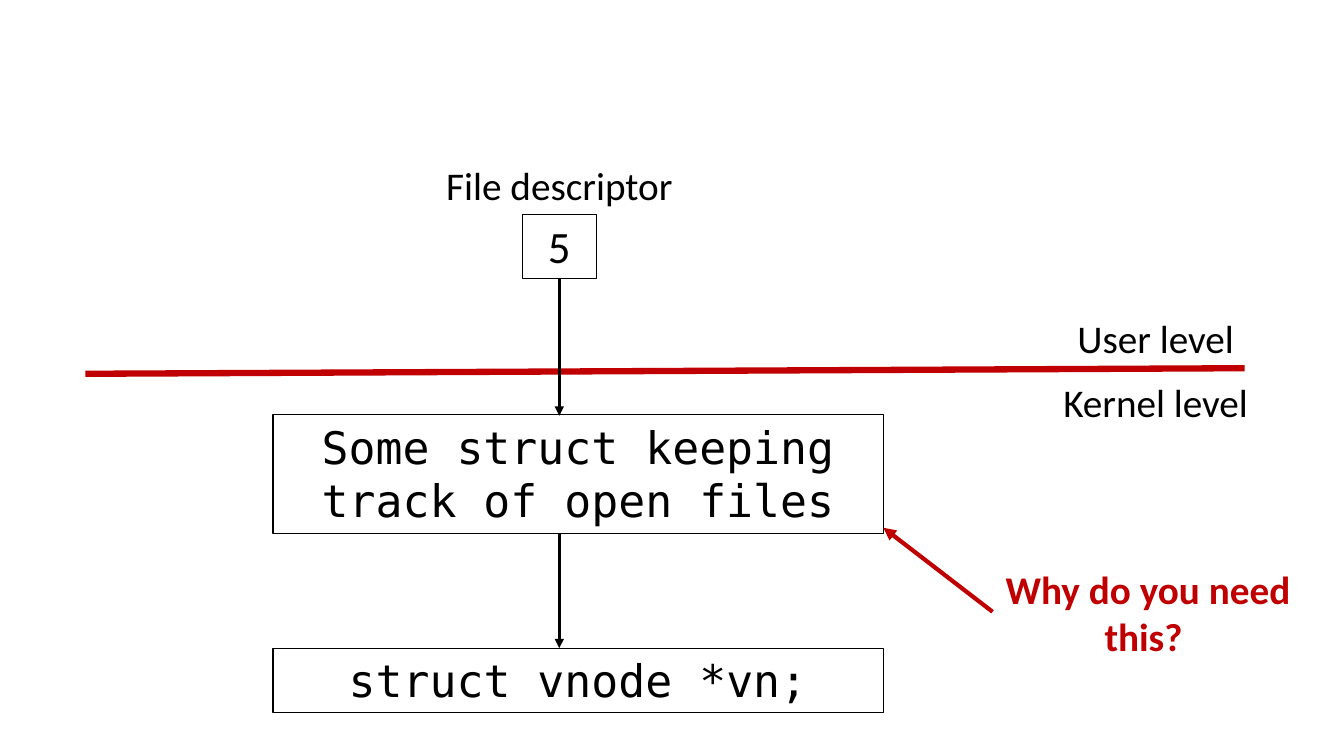
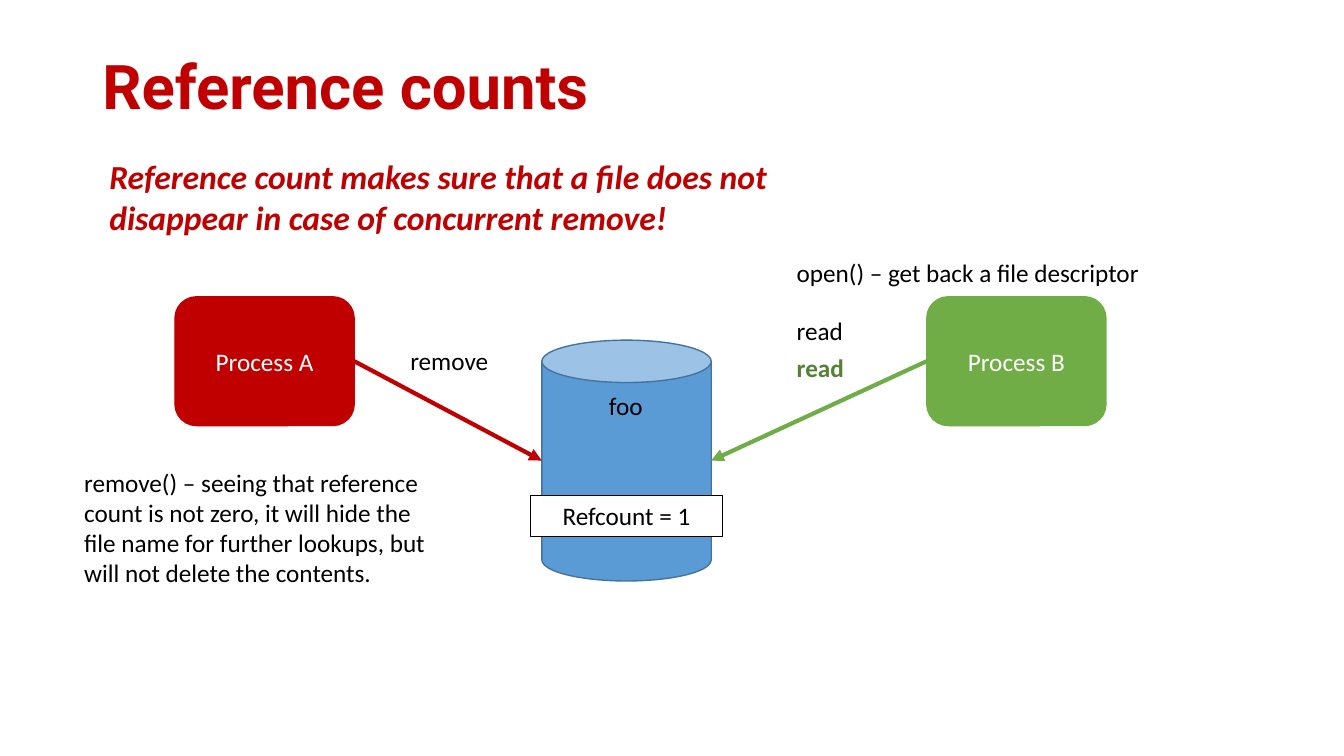
"""Build two slides on open files and reference counts."""
from dataclasses import dataclass

from lxml import etree
from pptx import Presentation
from pptx.dml.color import RGBColor
from pptx.enum.shapes import MSO_CONNECTOR, MSO_SHAPE
from pptx.enum.text import MSO_ANCHOR, PP_ALIGN
from pptx.oxml.ns import qn
from pptx.util import Pt

RECT, ROUND, CAN = MSO_SHAPE.RECTANGLE, MSO_SHAPE.ROUNDED_RECTANGLE, MSO_SHAPE.CAN
STRAIGHT = MSO_CONNECTOR.STRAIGHT
TOP, MIDDLE = MSO_ANCHOR.TOP, MSO_ANCHOR.MIDDLE
LEFT, CENTER = PP_ALIGN.LEFT, PP_ALIGN.CENTER


@dataclass(frozen=True)
class Theme:
    """Hold the colours, fonts and type sizes of the deck."""
    black: str = "000000"
    white: str = "FFFFFF"
    red: str = "C00000"
    green: str = "70AD47"
    dark: str = "548235"
    blue: str = "5B9BD5"
    edge: str = "43739E"
    sans: str = "Calibri"
    mono: str = "DejaVu Sans Mono"
    head: str = "Roboto"
    title: int = 44
    code: int = 32
    label: int = 28
    lead: int = 24
    note: int = 18


THEME = Theme()


def write(shape, text, size, color=THEME.black, face=THEME.sans, align=LEFT,
          anchor=TOP, bold=False, italic=False):
    """Put one styled paragraph into a shape."""
    frame = shape.text_frame
    frame.word_wrap = True
    frame.vertical_anchor = anchor
    para = frame.paragraphs[0]
    para.text = text
    para.alignment = align
    font = para.font
    font.size, font.name = Pt(size), face
    font.bold, font.italic = bold, italic
    font.color.rgb = RGBColor.from_string(color)
    return para


def label(slide, area, text, size=THEME.note, **style):
    """Add a plain text box."""
    box = slide.shapes.add_textbox(*map(Pt, area))
    return write(box, text, size, **style)


def heading(slide, text):
    """Add the slide title."""
    para = label(slide, (66, 12, 828, 104), text, THEME.title,
                 color=THEME.red, face=THEME.head, anchor=MIDDLE, bold=True)
    para.line_spacing = 0.9


def block(slide, kind, area, fill=None, edge=THEME.black, width=0.75):
    """Add an outlined shape, with a fill if one is given."""
    shape = slide.shapes.add_shape(kind, *map(Pt, area))
    shape.shadow.inherit = False
    if fill:
        shape.fill.solid()
        shape.fill.fore_color.rgb = RGBColor.from_string(fill)
    else:
        shape.fill.background()
    shape.line.color.rgb = RGBColor.from_string(edge)
    shape.line.width = Pt(width)
    return shape


def frame(slide, area, text, size=THEME.code, face=THEME.sans, fill=None):
    """Add a thin black rectangle with centred text."""
    shape = block(slide, RECT, area, fill)
    write(shape, text, size, face=face, align=CENTER)
    return shape


def line(slide, start, end, color=THEME.black, width=2.25, arrow=True):
    """Add a straight line, with an arrowhead at its end by default."""
    link = slide.shapes.add_connector(STRAIGHT, *map(Pt, (*start, *end)))
    link.line.color.rgb = RGBColor.from_string(color)
    link.line.width = Pt(width)
    if arrow:
        tail = etree.SubElement(link.line._get_or_add_ln(), qn("a:tailEnd"))
        tail.set("type", "triangle")
    etree.SubElement(link._element.spPr, qn("a:effectLst"))
    return link


def process(slide, left, name, color, side, goal):
    """Add a process and its arrow to the file."""
    shape = block(slide, ROUND, (left, 212, 128, 92), color, color, 1)
    write(shape, name, THEME.note, THEME.white, align=CENTER, anchor=MIDDLE)
    link = line(slide, goal, goal, color, 3)
    link.begin_connect(shape, side)


def levels(slide):
    """Draw the path from a file descriptor to its vnode."""
    line(slide, (61, 267), (889, 263), THEME.red, 4.5, arrow=False)
    for top, text in ((221, "User level"), (267, "Kernel level")):
        label(slide, (731, top, 189, 41), text, THEME.label, align=CENTER)
    label(slide, (306, 112, 187, 41), "File descriptor", THEME.label, align=CENTER)
    number = frame(slide, (373, 153, 53, 46), "5")
    frame(slide, (195, 296, 436, 85), "Some struct keeping track of open files",
          face=THEME.mono)
    frame(slide, (195, 463, 436, 46), "struct vnode *vn;", face=THEME.mono)
    axis = 399.5
    line(slide, (axis, 199), (axis, 297)).begin_connect(number, 2)
    line(slide, (axis, 381), (axis, 463))
    label(slide, (709, 400, 222, 75), "Why do you need this? ", THEME.label,
          color=THEME.red, align=CENTER, bold=True)
    line(slide, (709, 437), (631, 377), THEME.red, 3)


def counts(slide):
    """Draw two processes that share one file."""
    heading(slide, "Reference counts")
    left, top, wide, high = 387, 243, 121, 172
    block(slide, CAN, (left, top, wide, high), THEME.blue, THEME.edge, 1)
    label(slide, (418, 275, 58, 29), "foo", align=CENTER)
    mid = top + high / 2
    process(slide, 125, "Process A", THEME.red, 3, (left, mid))
    process(slide, 662, "Process B", THEME.green, 1, (left + wide, mid))
    frame(slide, (379, 354, 137, 29), "Refcount = 1", THEME.note, fill=THEME.white)
    label(slide, (286, 243, 80, 29), "remove")
    label(slide, (562, 222, 80, 29), "read")
    label(slide, (562, 248, 80, 29), "read", color=THEME.dark, bold=True)
    label(slide, (562, 180, 266, 29), "open() – get back a file descriptor")
    label(slide, (53, 330, 266, 94),
          "remove() – seeing that reference count is not zero, it will hide the "
          "file name for further lookups, but will not delete the contents.")
    label(slide, (71, 108, 571, 65),
          "Reference count makes sure that a file does not disappear in case of "
          "concurrent remove!", THEME.lead, color=THEME.red, bold=True, italic=True)


def main():
    """Build and save the deck."""
    deck = Presentation()
    deck.slide_width, deck.slide_height = Pt(960), Pt(540)
    for draw in (levels, counts):
        draw(deck.slides.add_slide(deck.slide_layouts[6]))
    deck.save("out.pptx")


if __name__ == "__main__":
    main()
